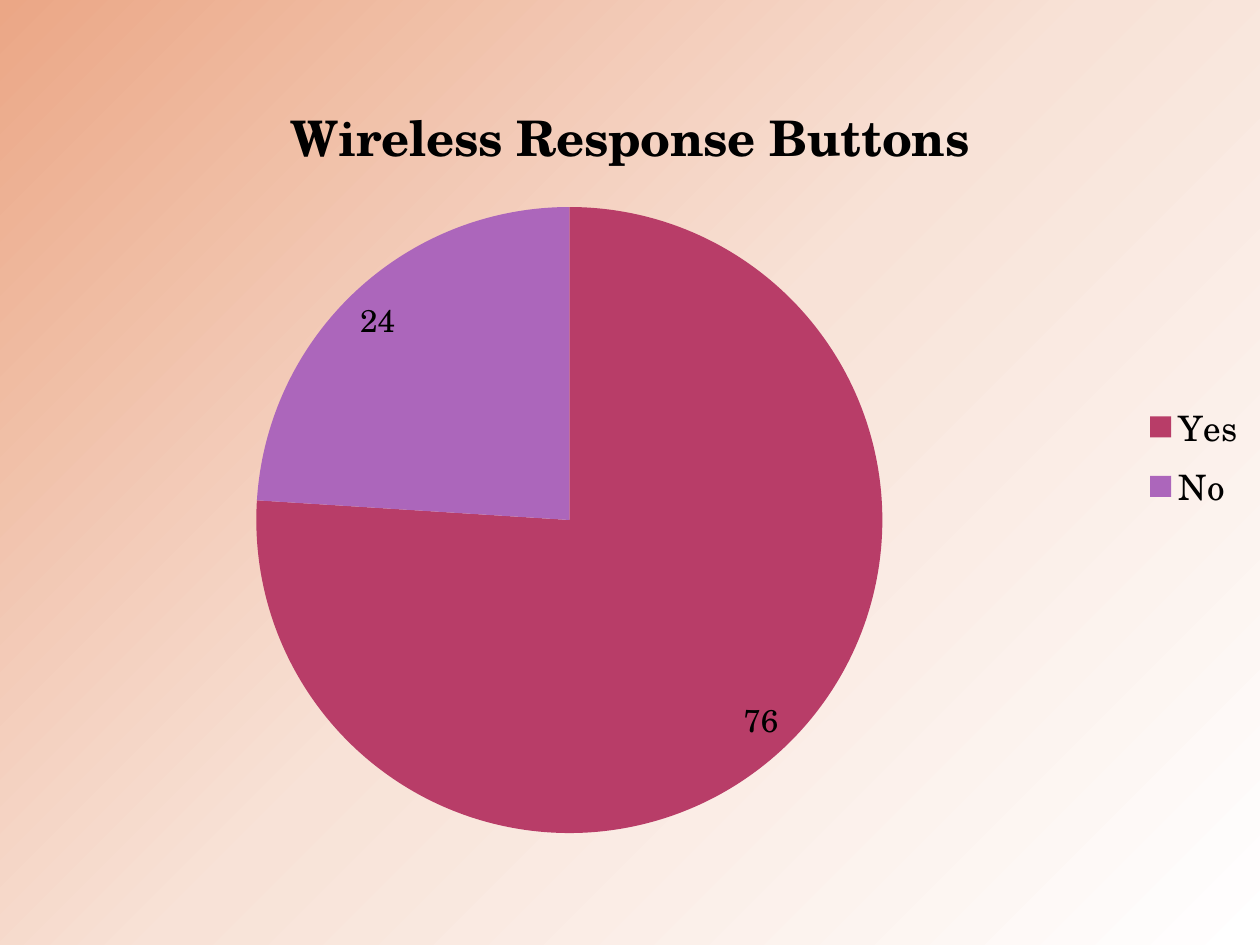
"""Builds a slide with one pie chart on a shaded background."""
import copy
import dataclasses

import pptx
import pptx.chart.data
import pptx.dml.color
import pptx.enum.chart
import pptx.util

Pt = pptx.util.Pt
Color = pptx.dml.color.RGBColor.from_string


@dataclasses.dataclass(frozen=True)
class Theme:
    face: str = "TeX Gyre Schola"
    ink: str = "000000"
    slices: tuple = ("B83D68", "AC66BB")
    shades: tuple = ("EBA786", "F8E2D7", "FFFFFF")
    base: int = 10
    label: int = 18
    legend: int = 20
    title: int = 28


class Page:
    def __init__(self, deck, theme):
        self.theme = theme
        self.slide = deck.slides.add_slide(deck.slide_layouts[6])

    def style(self, font, size, bold=False):
        font.name, font.size, font.bold = self.theme.face, Pt(size), bold
        font.color.rgb = Color(self.theme.ink)

    def shade(self, angle):
        fill = self.slide.background.fill
        fill.gradient()
        fill.gradient_angle = 360 - angle
        stops = self.slide.element.xpath(".//a:gsLst")[0]
        stops.append(copy.deepcopy(stops[-1]))
        last = len(self.theme.shades) - 1
        for i, (stop, shade) in enumerate(zip(fill.gradient_stops, self.theme.shades)):
            stop.position = i / last
            stop.color.rgb = Color(shade)

    def pie(self, title, name, values, left, top, width, height):
        data = pptx.chart.data.CategoryChartData()
        data.categories = values.keys()
        data.add_series(name, values.values())
        chart = self.slide.shapes.add_chart(
            pptx.enum.chart.XL_CHART_TYPE.PIE,
            Pt(left), Pt(top), Pt(width), Pt(height), data).chart
        self.style(chart.font, self.theme.base)

        chart.has_title = True
        frame = chart.chart_title.text_frame
        frame.text = title
        self.style(frame.paragraphs[0].font, self.theme.title, True)
        chart.chart_title.include_in_layout = False

        chart.has_legend = True
        chart.legend.position = pptx.enum.chart.XL_LEGEND_POSITION.RIGHT
        chart.legend.include_in_layout = False
        self.style(chart.legend.font, self.theme.legend)

        plot = chart.plots[0]
        plot.vary_by_categories = True
        series = plot.series[0]
        for i, color in enumerate(self.theme.slices):
            fill = series.points[i].format.fill
            fill.solid()
            fill.fore_color.rgb = Color(color)
        labels = series.data_labels
        labels.show_value = True
        labels.show_percentage = False
        labels.position = pptx.enum.chart.XL_LABEL_POSITION.INSIDE_END
        self.style(labels.font, self.theme.label)


def main():
    deck = pptx.Presentation()
    deck.slide_width, deck.slide_height = Pt(720), Pt(540)
    page = Page(deck, Theme())
    page.shade(45)
    page.pie("Wireless Response Buttons", "Series 1", {"Yes": 76, "No": 24},
             0, 36, 720, 450)
    deck.save("out.pptx")


if __name__ == "__main__":
    main()
